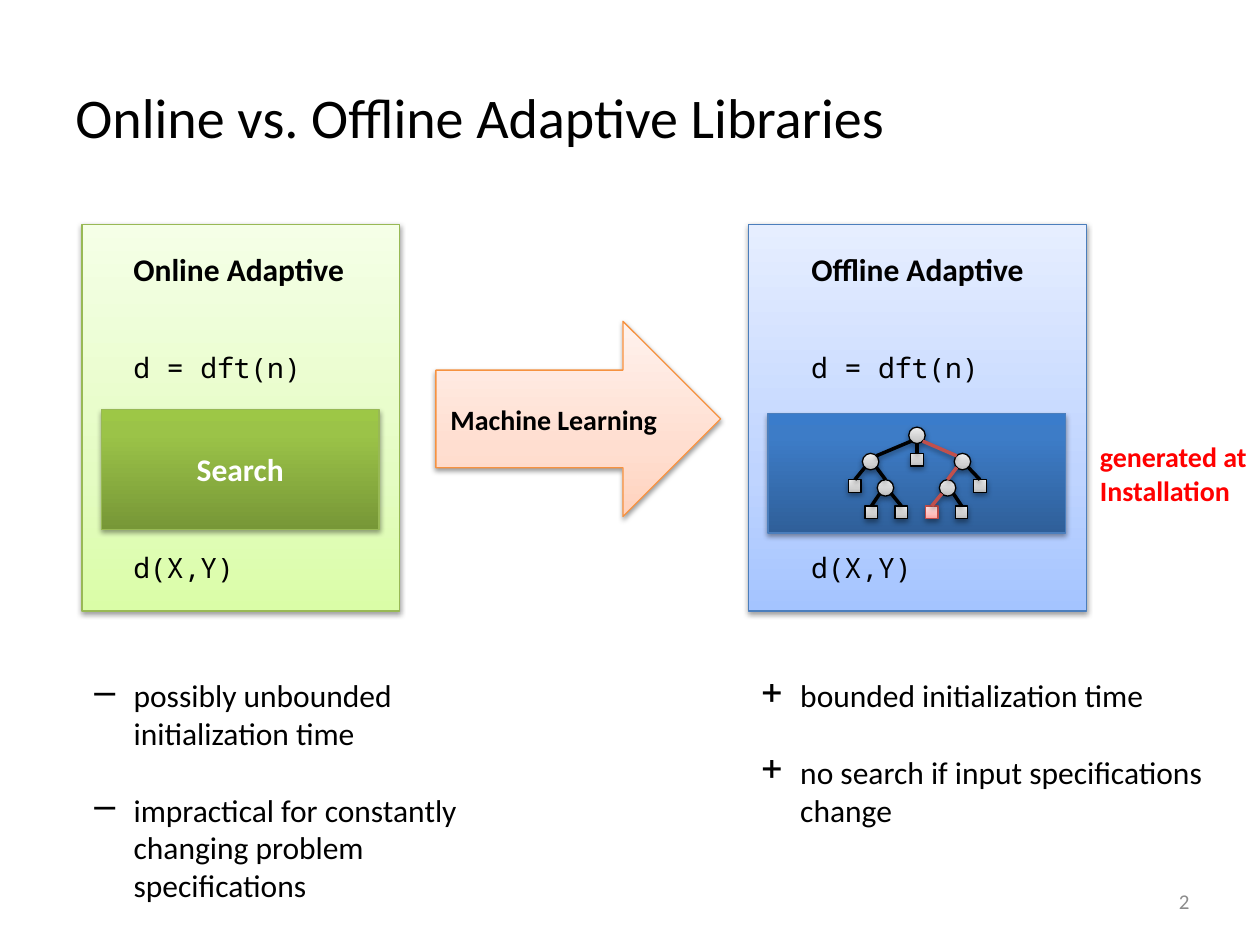
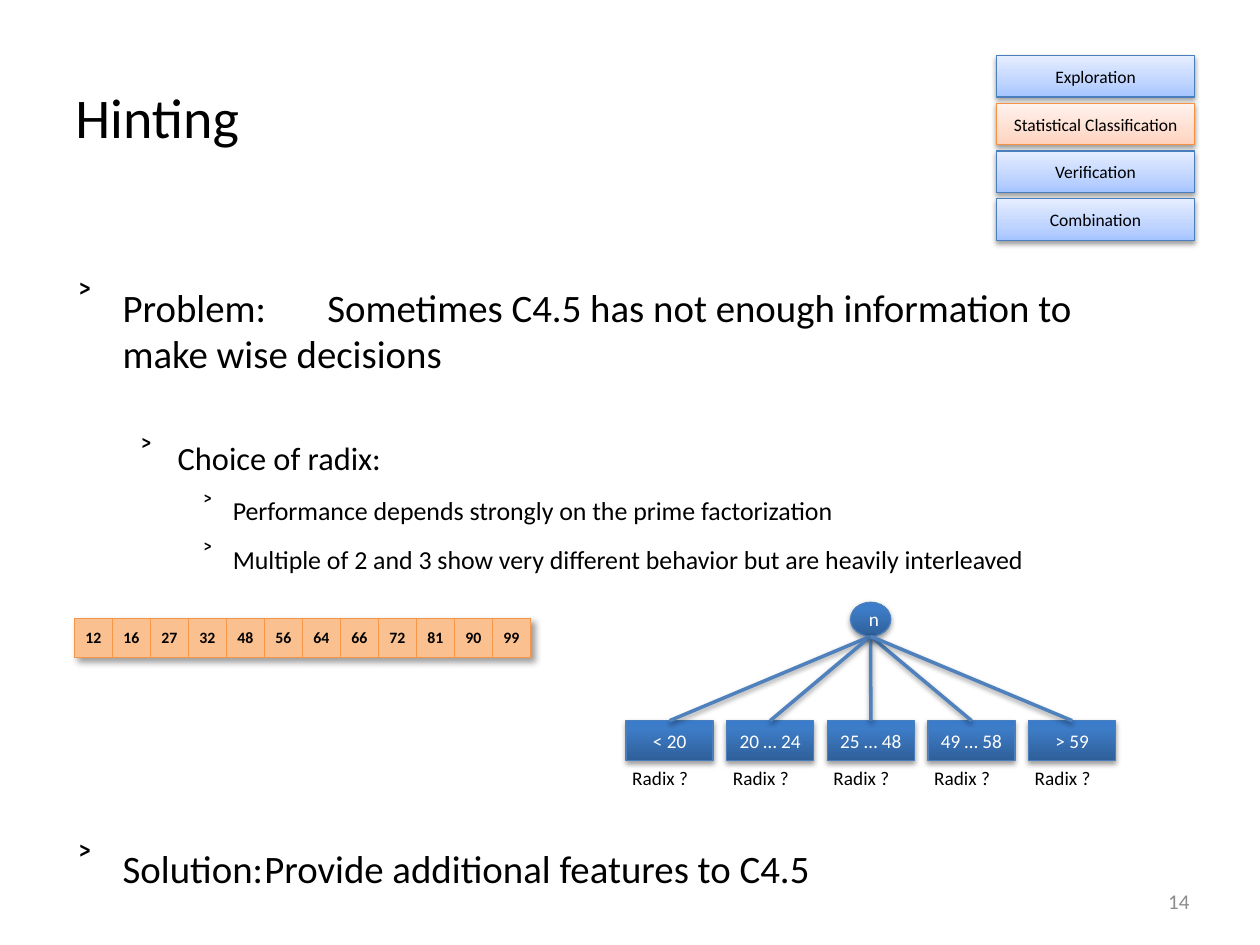
"""Builds two slides on adaptive libraries and hinting."""
from copy import deepcopy

from lxml import etree
from pptx import Presentation
from pptx.dml.color import RGBColor
from pptx.enum import shapes, text
from pptx.oxml import ns, parse_xml
from pptx.util import Pt

RECTANGLE = shapes.MSO_SHAPE.RECTANGLE
OVAL = shapes.MSO_SHAPE.OVAL
STRAIGHT = shapes.MSO_CONNECTOR.STRAIGHT
CENTER = text.PP_ALIGN.CENTER
RIGHT = text.PP_ALIGN.RIGHT
MIDDLE = text.MSO_ANCHOR.MIDDLE

LIGHT_BLUE = ("4B7EBC", 0.75, ("A4C4FF", "BFD4FF", "E6EEFF"), 0.35)
LIGHT_GREEN = ("98B955", 0.75, ("DAFDA7", "E4FCC2", "F5FFE7"), 0.35)
LIGHT_ORANGE = ("F69240", 0.75, ("FFD2BD", "FFDED0", "FFF2ED"), 0.35)
LIGHT_RED = ("BF4C48", 0.75, ("FFA6A5", "FFC0BF", "FFE7E7"), 0.35)
GRAY = ("000000", 0.75, ("BDBDBD", "D1D1D1", "EEEEEE"), 0.35)
BLUE = ("4B7EBC", 0.75, ("2F5F99", "3D7CC7", "3A7CCB"), 0.8)
GREEN = ("98B955", 0.75, ("779737", "9BC348", "9DC746"), 0.8)
SHADOW = (
    f'<a:effectLst {ns.nsdecls("a")}><a:outerShdw blurRad="%d" dist="%d" dir="%d" '
    'algn="tl" rotWithShape="0"><a:srgbClr val="000000"><a:alpha val="38000"/>'
    '</a:srgbClr></a:outerShdw></a:effectLst>'
)


def style(shape, line_color, line_width, stops=None, middle=None):
    """Give a shape or connector its line, gradient and soft shadow."""
    shape.line.color.rgb = RGBColor.from_string(line_color)
    shape.line.width = Pt(line_width)
    properties = shape._element.spPr
    if stops:
        shape.fill.gradient()
        shape.fill.gradient_angle = 90
        stop_list = properties.find(".//" + ns.qn("a:gsLst"))
        stop_list.append(deepcopy(stop_list[-1]))
        for stop, color, position in zip(shape.fill.gradient_stops, stops, (0, middle, 1)):
            stop.color.rgb = RGBColor.from_string(color)
            stop.position = position
    properties.append(parse_xml(SHADOW % (Pt(3.1), Pt(1.6), 5400000)))


def write(shape, content, size, color="000000", bold=False, align=text.PP_ALIGN.LEFT,
          anchor=text.MSO_ANCHOR.TOP, font="Calibri"):
    """Fill a shape with text in one font."""
    frame = shape.text_frame
    frame.word_wrap = True
    frame.vertical_anchor = anchor
    frame.text = content
    for paragraph in frame.paragraphs:
        paragraph.alignment = align
        paragraph.font.name = font
        paragraph.font.size = Pt(size)
        paragraph.font.bold = bold
        paragraph.font.color.rgb = RGBColor.from_string(color)


presentation = Presentation()
presentation.slide_width = Pt(720)
presentation.slide_height = Pt(540)

for title, number in (("Online vs. Offline Adaptive Libraries", "2"), ("Hinting", "14")):
    slide = presentation.slides.add_slide(presentation.slide_layouts[6])
    title_box = slide.shapes.add_textbox(Pt(36), Pt(21.6), Pt(648), Pt(90))
    write(title_box, title, 32, anchor=MIDDLE)
    number_box = slide.shapes.add_textbox(Pt(649.4), Pt(500.4), Pt(37.4), Pt(28.8))
    write(number_box, number, 12, "8C8C8C", align=RIGHT, anchor=MIDDLE)
libraries, hinting = presentation.slides

drawbacks = (
    ("possibly unbounded initialization time", 18, 22.5, 22.5, 0, 1),
    ("impractical for constantly changing problem specifications", 18, 22.5, 22.5, 22, 1),
)
benefits = (
    ("bounded initialization time", 18, 22.5, 22.5, 0, 1),
    ("no search if input specifications change", 18, 22.5, 22.5, 22, 1),
)
hints = (
    ("Problem:\tSometimes C4.5 has not enough information to\vmake wise decisions",
     22.2, 27, 27, 0, 1),
    ("Choice of radix:", 18.5, 58.5, 22.5, 35, 1),
    ("Performance depends strongly on the prime factorization", 14.8, 90, 18, 3, 1.4),
    ("Multiple of 2 and 3 show very different behavior but are heavily interleaved",
     14.8, 90, 18, 3, 1.4),
    ("Solution:\tProvide additional features to C4.5", 22.2, 27, 27, 144, 1.4),
)
for slide, bounds, inset, bullet, percent, rows in (
    (libraries, (46.8, 383, 268.6, 138.2), 3.6, "–", 120, drawbacks),
    (libraries, (427.7, 383, 272.2, 94.3), 3.6, "+", 120, benefits),
    (hinting, (36, 126, 648, 393.1), 36, "˃", 100, hints),
):
    list_box = slide.shapes.add_textbox(*map(Pt, bounds))
    write(list_box, "\n".join(row[0] for row in rows), 18)
    list_box.text_frame.margin_top = Pt(inset)
    for paragraph, row in zip(list_box.text_frame.paragraphs, rows):
        _, size, indent, hanging, before, spacing = row
        paragraph.font.size = Pt(size)
        paragraph.space_before = Pt(before)
        paragraph.line_spacing = spacing
        properties = paragraph._p.get_or_add_pPr()
        properties.set("marL", str(Pt(indent)))
        properties.set("indent", str(-Pt(hanging)))
        bullet_size = etree.Element(ns.qn("a:buSzPct"), val=str(percent * 1000))
        bullet_mark = etree.Element(ns.qn("a:buChar"), char=bullet)
        for element in (bullet_size, bullet_mark):
            properties.find(ns.qn("a:defRPr")).addprevious(element)

for heading, panel_left, panel_width, panel_theme, core_top, core_theme, core_text, text_left in (
    ("Online Adaptive", 46.8, 181.4, LIGHT_GREEN, 234, GREEN, "Search", 69.1),
    ("Offline Adaptive", 427.7, 193, LIGHT_BLUE, 236.2, BLUE, "", 456.5),
):
    panel = libraries.shapes.add_shape(
        RECTANGLE, Pt(panel_left), Pt(128.2), Pt(panel_width), Pt(221))
    style(panel, *panel_theme)
    core = libraries.shapes.add_shape(
        RECTANGLE, Pt(panel_left + 11.2), Pt(core_top), Pt(panel_width - 22.8), Pt(68.4))
    style(core, *core_theme)
    if core_text:
        write(core, core_text, 18, "FFFFFF", True, CENTER, MIDDLE)
    heading_box = libraries.shapes.add_textbox(Pt(text_left), Pt(139.3), Pt(140), Pt(28.8))
    write(heading_box, heading, 18, bold=True)
    for code, top in (("d = dft(n)", 196.6), ("d(X,Y)", 311)):
        code_box = libraries.shapes.add_textbox(Pt(text_left), Pt(top), Pt(160), Pt(26.6))
        write(code_box, code, 16, font="Noto Sans Mono")

arrow = libraries.shapes.add_shape(
    shapes.MSO_SHAPE.RIGHT_ARROW, Pt(249.1), Pt(183.6), Pt(162.7), Pt(111.6))
style(arrow, *LIGHT_ORANGE)
write(arrow, "Machine Learning", 16, bold=True, align=CENTER, anchor=MIDDLE)
note = libraries.shapes.add_textbox(Pt(621.4), Pt(247.7), Pt(102.2), Pt(46.1))
write(note, "generated at Installation", 16, "FF0000", True)

inner_nodes = {}
for name, parent, offset, level, on_path in (
    ("root", None, 0, 0, False),
    ("left", "root", -26.5, 1, False),
    ("right", "root", 26, 1, True),
    ("left inner", "left", -18, 2, False),
    ("right inner", "right", 17.5, 2, True),
    (None, "root", 0, 1, False),
    (None, "left", -35.5, 2, False),
    (None, "right", 36, 2, False),
    (None, "left inner", -26, 3, False),
    (None, "left inner", -9, 3, False),
    (None, "right inner", 8.5, 3, True),
    (None, "right inner", 25.5, 3, False),
):
    kind, node_size = (OVAL, 9.4) if name else (RECTANGLE, 7.2)
    x, top = 524 + offset, 244.1 + 15 * level
    node = libraries.shapes.add_shape(
        kind, Pt(x - node_size / 2), Pt(top), Pt(node_size), Pt(node_size))
    style(node, *(LIGHT_RED if on_path and not name else GRAY))
    if name:
        inner_nodes[name] = (x, top + 4.7)
    if parent:
        parent_x, parent_y = inner_nodes[parent]
        side = (x > parent_x) - (x < parent_x)
        start = (parent_x + 3.3 * side, parent_y + (3.3 if side else 4.7))
        end = (x - 3.3 * side, top + 1.4) if parent == "root" else (x, top)
        edge = libraries.shapes.add_connector(STRAIGHT, *map(Pt, start + end))
        if not name:
            edge.end_connect(node, 0)
        style(edge, "C0504D" if on_path else "000000", 2)

for index, stage in enumerate(
        ("Exploration", "Statistical Classification", "Verification", "Combination")):
    stage_box = hinting.shapes.add_shape(
        RECTANGLE, Pt(569.5), Pt(31.7 + 27.3 * index), Pt(113), Pt(23.8))
    style(stage_box, *(LIGHT_ORANGE if index == 1 else LIGHT_BLUE))
    write(stage_box, stage, 10, align=CENTER, anchor=MIDDLE)

sizes = (12, 16, 27, 32, 48, 56, 64, 66, 72, 81, 90, 99)
table = hinting.shapes.add_table(
    1, len(sizes), Pt(42.5), Pt(353.3), Pt(260.6), Pt(22.5)).table
table.first_row = table.horz_banding = False
table._tbl.tblPr.insert(0, parse_xml(SHADOW % (Pt(4), Pt(3), 2700000)))
for column, cell, size in zip(table.columns, table.rows[0].cells, sizes):
    column.width = Pt(21.72)
    cell.margin_left = cell.margin_right = Pt(5.4)
    cell.margin_top = cell.margin_bottom = Pt(2.7)
    cell.vertical_anchor = MIDDLE
    cell.text = str(size)
    paragraph = cell.text_frame.paragraphs[0]
    paragraph.alignment = CENTER
    paragraph.font.name = "Calibri"
    paragraph.font.size = Pt(9)
    paragraph.font.bold = True
    paragraph.font.color.rgb = RGBColor.from_string("000000")
    cell.fill.solid()
    cell.fill.fore_color.rgb = RGBColor.from_string("FAC090")
    for index, edge_name in enumerate(("lnL", "lnR", "lnT", "lnB")):
        border = parse_xml(
            f'<a:{edge_name} {ns.nsdecls("a")} w="12700"><a:solidFill>'
            f'<a:srgbClr val="F79646"/></a:solidFill></a:{edge_name}>')
        cell._tc.tcPr.insert(index, border)

root = hinting.shapes.add_shape(OVAL, Pt(486), Pt(344.2), Pt(23), Pt(19.4))
style(root, *BLUE)
write(root, "n", 11, "FFFFFF", align=CENTER, anchor=MIDDLE)
for index, interval in enumerate(("< 20", "20 … 24", "25 … 48", "49 … 58", "> 59")):
    left = 357.8 + 57.5 * index
    leaf = hinting.shapes.add_shape(RECTANGLE, Pt(left), Pt(411.8), Pt(49.7), Pt(23))
    style(leaf, *BLUE)
    write(leaf, interval, 11, "FFFFFF", align=CENTER, anchor=MIDDLE)
    leaf.text_frame.margin_left = leaf.text_frame.margin_right = Pt(2)
    branch = hinting.shapes.add_connector(
        STRAIGHT, Pt(497.5), Pt(363.6), Pt(left + 24.85), Pt(411.8))
    branch.end_connect(leaf, 0)
    style(branch, "4F81BD", 2)
    radix = hinting.shapes.add_textbox(Pt(left - 3.6), Pt(434.2), Pt(61.2), Pt(20.9))
    write(radix, "Radix ?", 11)

presentation.save("out.pptx")
